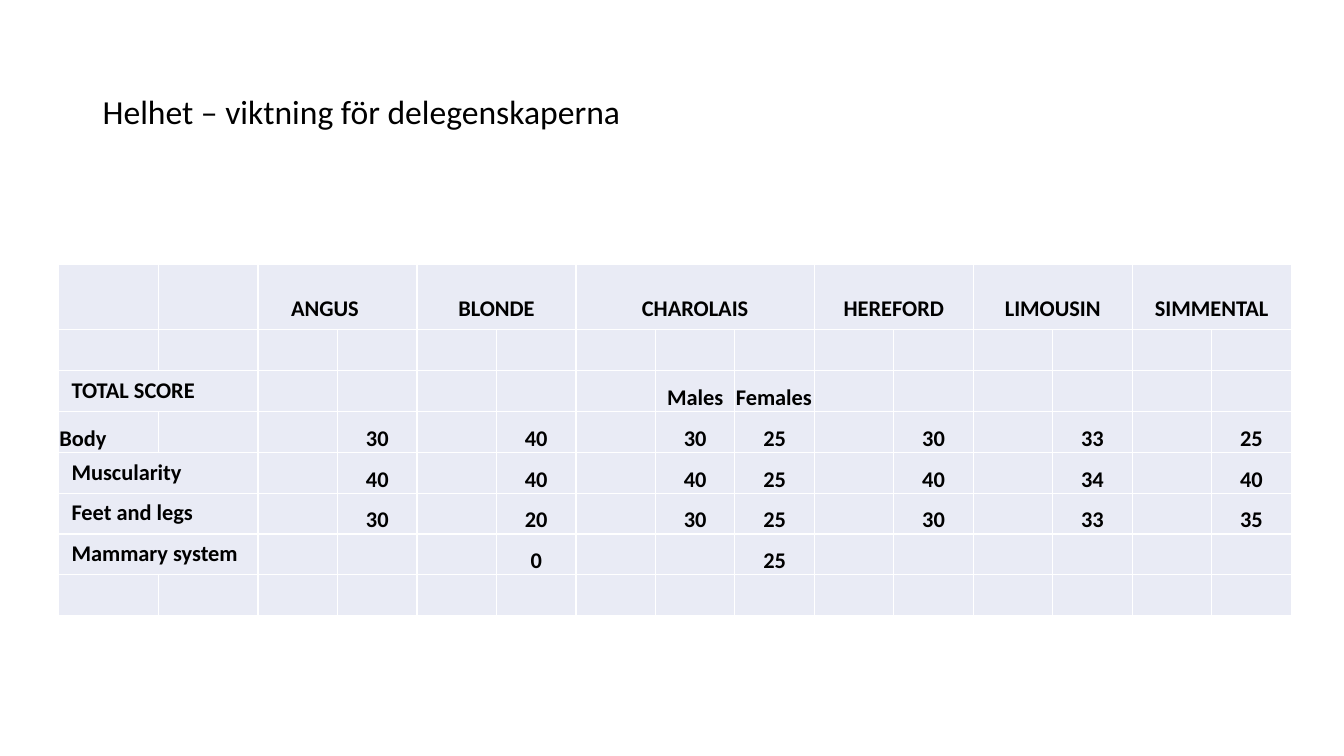
from dataclasses import dataclass

from lxml import etree
from pptx import Presentation
from pptx.dml.color import RGBColor
from pptx.enum.text import MSO_ANCHOR, PP_ALIGN
from pptx.oxml.ns import qn
from pptx.util import Inches, Pt

LEFT, CENTER = PP_ALIGN.LEFT, PP_ALIGN.CENTER
MIDDLE, BOTTOM = MSO_ANCHOR.MIDDLE, MSO_ANCHOR.BOTTOM


@dataclass(frozen=True)
class Theme:
    font: str = "Calibri"
    text: RGBColor = RGBColor(0, 0, 0)
    cell: RGBColor = RGBColor(0xE9, 0xEB, 0xF5)
    border: str = "FFFFFF"
    border_width: int = Pt(1)
    title_size: int = Pt(24)
    table_size: int = Pt(16)


THEME = Theme()
WIDE_INSETS = (0.13, 0.06, 0.13, 0.07)
SHIFTED_INSETS = (0.13, 0.06, 0.38, 0.07)
TIGHT_INSETS = (0.01, 0.01, 0.01, 0)

COLUMN_COUNT, ROW_COUNT = 15, 8
LABEL_COLUMN_WIDTH = 0.99
HEADER_HEIGHT = 0.65
BREEDS = [
    ("ANGUS", 2, SHIFTED_INSETS),
    ("BLONDE", 2, WIDE_INSETS),
    ("CHAROLAIS", 3, WIDE_INSETS),
    ("HEREFORD", 2, WIDE_INSETS),
    ("LIMOUSIN", 2, WIDE_INSETS),
    ("SIMMENTAL", 2, WIDE_INSETS),
]
VALUE_COLUMNS = (3, 5, 7, 8, 10, 12, 14)
SCORES = [
    ("TOTAL SCORE", ("", "", "Males", "Females", "", "", "")),
    ("Body", (30, 40, 30, 25, 30, 33, 25)),
    ("Muscularity", (40, 40, 40, 25, 40, 34, 40)),
    ("Feet and legs", (30, 20, 30, 25, 30, 33, 35)),
    ("Mammary system", ("", 0, "", 25, "", "", "")),
]


def format_font(paragraph, size, bold):
    for run in paragraph.runs:
        run.font.name = THEME.font
        run.font.size = size
        run.font.bold = bold
        run.font.color.rgb = THEME.text


def style_cell(cell):
    properties = cell._tc.get_or_add_tcPr()
    for side in ("lnL", "lnR", "lnT", "lnB"):
        line = etree.SubElement(properties, qn(f"a:{side}"), w=str(THEME.border_width))
        fill = etree.SubElement(line, qn("a:solidFill"))
        etree.SubElement(fill, qn("a:srgbClr"), val=THEME.border)
    cell.fill.solid()
    cell.fill.fore_color.rgb = THEME.cell


def write_cell(cell, text, alignment, insets):
    cell.text = str(text)
    cell.vertical_anchor = BOTTOM
    cell.margin_left, cell.margin_top, cell.margin_right, cell.margin_bottom = map(Inches, insets)
    paragraph = cell.text_frame.paragraphs[0]
    paragraph.alignment = alignment
    format_font(paragraph, THEME.table_size, True)


def add_title(slide, left, top, width, height):
    shape = slide.shapes.add_textbox(Inches(left), Inches(top), Inches(width), Inches(height))
    frame = shape.text_frame
    frame.word_wrap = True
    frame.vertical_anchor = MIDDLE
    frame.text = "Helhet – viktning för delegenskaperna"
    paragraph = frame.paragraphs[0]
    paragraph.line_spacing = 0.9
    format_font(paragraph, THEME.title_size, False)


def add_score_table(slide, left, top, width, height):
    table = slide.shapes.add_table(
        ROW_COUNT, COLUMN_COUNT, Inches(left), Inches(top), Inches(width), Inches(height)
    ).table
    table.first_row = False
    table.horz_banding = False
    value_width = (width - 2 * LABEL_COLUMN_WIDTH) / (COLUMN_COUNT - 2)
    for index, column in enumerate(table.columns):
        column.width = Inches(LABEL_COLUMN_WIDTH if index < 2 else value_width)
    row_height = (height - HEADER_HEIGHT) / (ROW_COUNT - 1)
    for index, row in enumerate(table.rows):
        row.height = Inches(row_height if index else HEADER_HEIGHT)
    for cell in table.iter_cells():
        style_cell(cell)

    column = 2
    for breed, span, insets in BREEDS:
        header = table.cell(0, column)
        header.merge(table.cell(0, column + span - 1))
        write_cell(header, breed, CENTER, insets)
        column += span

    for row, (label, values) in enumerate(SCORES, start=2):
        label_cell = table.cell(row, 0)
        if label == "Body":
            write_cell(label_cell, label, LEFT, TIGHT_INSETS)
        else:
            label_cell.merge(table.cell(row, 1))
            write_cell(label_cell, label, LEFT, WIDE_INSETS)
        for column, value in zip(VALUE_COLUMNS, values):
            if value != "":
                alignment = LEFT if value == "Females" else CENTER
                write_cell(table.cell(row, column), value, alignment, TIGHT_INSETS)


def main():
    presentation = Presentation()
    presentation.slide_width = Inches(13.33)
    presentation.slide_height = Inches(7.5)
    slide = presentation.slides.add_slide(presentation.slide_layouts[6])
    add_title(slide, 0.92, 0.4, 11.5, 1.45)
    add_score_table(slide, 0.58, 2.62, 12.23, 3.49)
    presentation.save("out.pptx")


if __name__ == "__main__":
    main()
